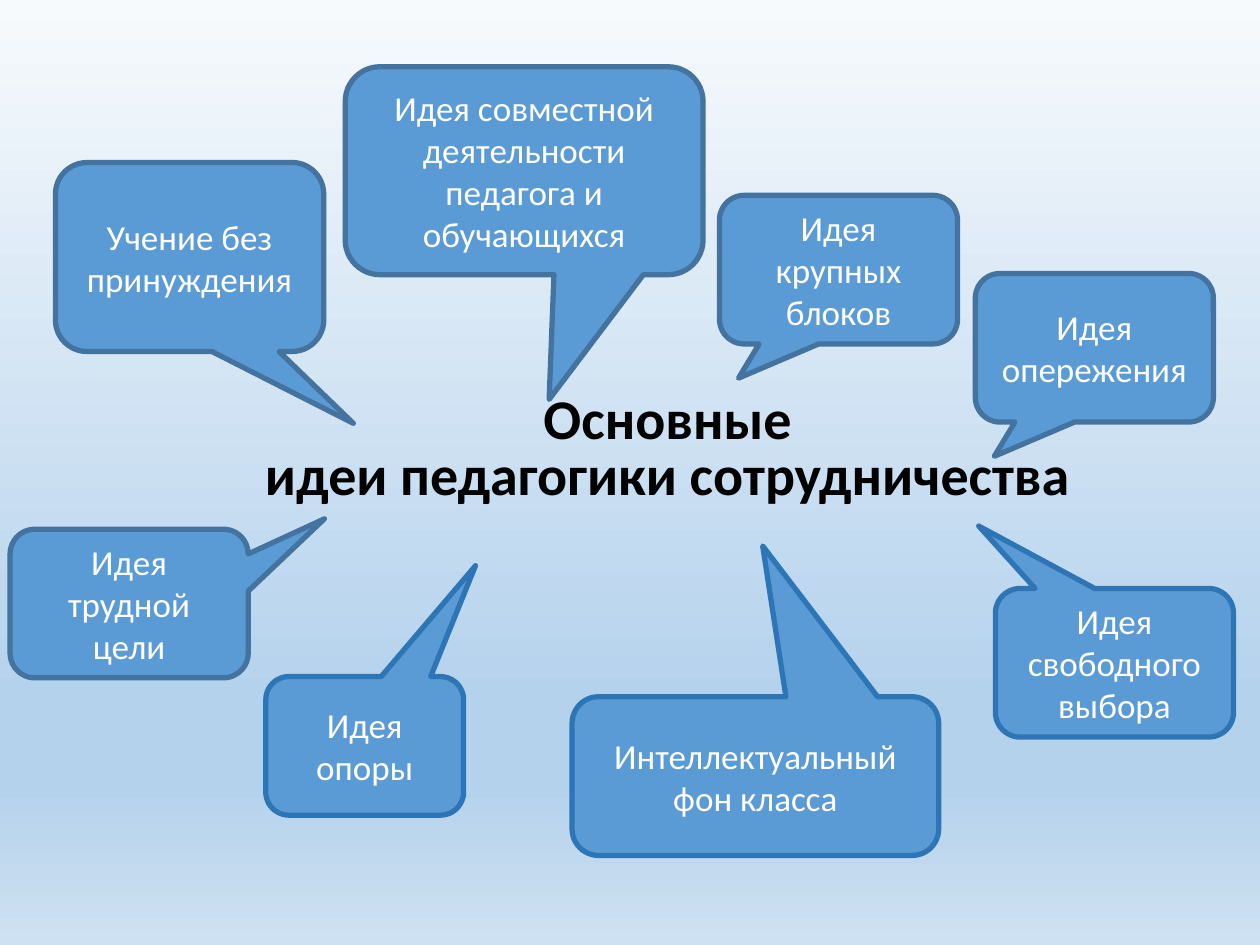
import copy

import pptx
import pptx.dml.color
import pptx.enum.shapes
import pptx.enum.text
import pptx.util

Inches = pptx.util.Inches
Pt = pptx.util.Pt

COLORS = {
    "fill": "5B9BD5",
    "muted": "43739E",
    "bright": "2E75B6",
    "callout_text": "FFFFFF",
    "title": "000000",
}
BACKGROUND_STOPS = [(0, "F7FAFD"), (0.74, "B5D2EC"), (0.83, "B5D2EC"), (1, "CEE1F2")]
FONT = "Calibri"
CORNER = 0.167

TITLE_LINES = ["Основные", "идеи педагогики сотрудничества"]
TITLE_BOX = (1.96, 2.95, 6.68, 1.25)

# text, box, pointer tip as a share of the box from its centre, outline
CALLOUTS = [
    ("Учение без принуждения", (0.44, 1.29, 2.13, 1.5), (0.61, 0.88), "muted"),
    ("Идея опоры", (2.11, 5.37, 1.57, 1.1), (0.56, -1.3), "bright"),
    ("Идея трудной цели", (0.08, 4.2, 1.89, 1.18), (0.82, -0.57), "muted"),
    ("Идея совместной деятельности педагога и обучающихся",
     (2.74, 0.53, 2.84, 1.65), (0.07, 1.1), "muted"),
    ("Идея крупных блоков", (5.71, 1.55, 1.89, 1.18), (-0.42, 0.73), "muted"),
    ("Идея свободного выбора", (7.9, 4.67, 1.89, 1.18), (-0.57, -0.92), "bright"),
    ("Интеллектуальный фон класса", (4.54, 5.53, 2.91, 1.26), (0.02, -1.45), "bright"),
    ("Идея опережения", (7.74, 2.17, 1.89, 1.18), (-0.42, 0.73), "muted"),
]


def rgb(value):
    return pptx.dml.color.RGBColor.from_string(value)


def paint_background(slide):
    fill = slide.background.fill
    fill.gradient()
    fill.gradient_angle = 270
    stop_list = slide.element.xpath(".//p:bg//a:gsLst")[0]
    while len(stop_list) < len(BACKGROUND_STOPS):
        stop_list.append(copy.deepcopy(stop_list[0]))
    for stop, (position, color) in zip(fill.gradient_stops, BACKGROUND_STOPS):
        stop.position = position
        stop.color.rgb = rgb(color)


def format_text(text_frame, size, color, bold=False):
    text_frame.word_wrap = True
    text_frame.vertical_anchor = pptx.enum.text.MSO_ANCHOR.MIDDLE
    for paragraph in text_frame.paragraphs:
        paragraph.alignment = pptx.enum.text.PP_ALIGN.CENTER
        for run in paragraph.runs:
            run.font.name = FONT
            run.font.size = Pt(size)
            run.font.bold = bold
            run.font.color.rgb = rgb(COLORS[color])


def add_callout(slide, text, box, tip, outline):
    shape = slide.shapes.add_shape(
        pptx.enum.shapes.MSO_SHAPE.ROUNDED_RECTANGULAR_CALLOUT, *map(Inches, box))
    for index, value in enumerate((*tip, CORNER)):
        shape.adjustments[index] = value
    shape.shadow.inherit = False
    shape.fill.solid()
    shape.fill.fore_color.rgb = rgb(COLORS["fill"])
    shape.line.color.rgb = rgb(COLORS[outline])
    shape.line.width = Pt(3)
    shape.text_frame.text = text
    format_text(shape.text_frame, 20, "callout_text")


def add_title(slide):
    text_frame = slide.shapes.add_textbox(*map(Inches, TITLE_BOX)).text_frame
    text_frame.margin_left = text_frame.margin_right = Inches(0.05)
    text_frame.text = "\n".join(TITLE_LINES)
    format_text(text_frame, 32, "title", bold=True)
    for paragraph in text_frame.paragraphs:
        paragraph.line_spacing = Pt(32)


def main():
    presentation = pptx.Presentation()
    presentation.slide_width = Inches(10)
    presentation.slide_height = Inches(7.5)
    slide = presentation.slides.add_slide(presentation.slide_layouts[6])
    paint_background(slide)
    for callout in CALLOUTS:
        add_callout(slide, *callout)
    add_title(slide)
    presentation.save("out.pptx")


if __name__ == "__main__":
    main()
